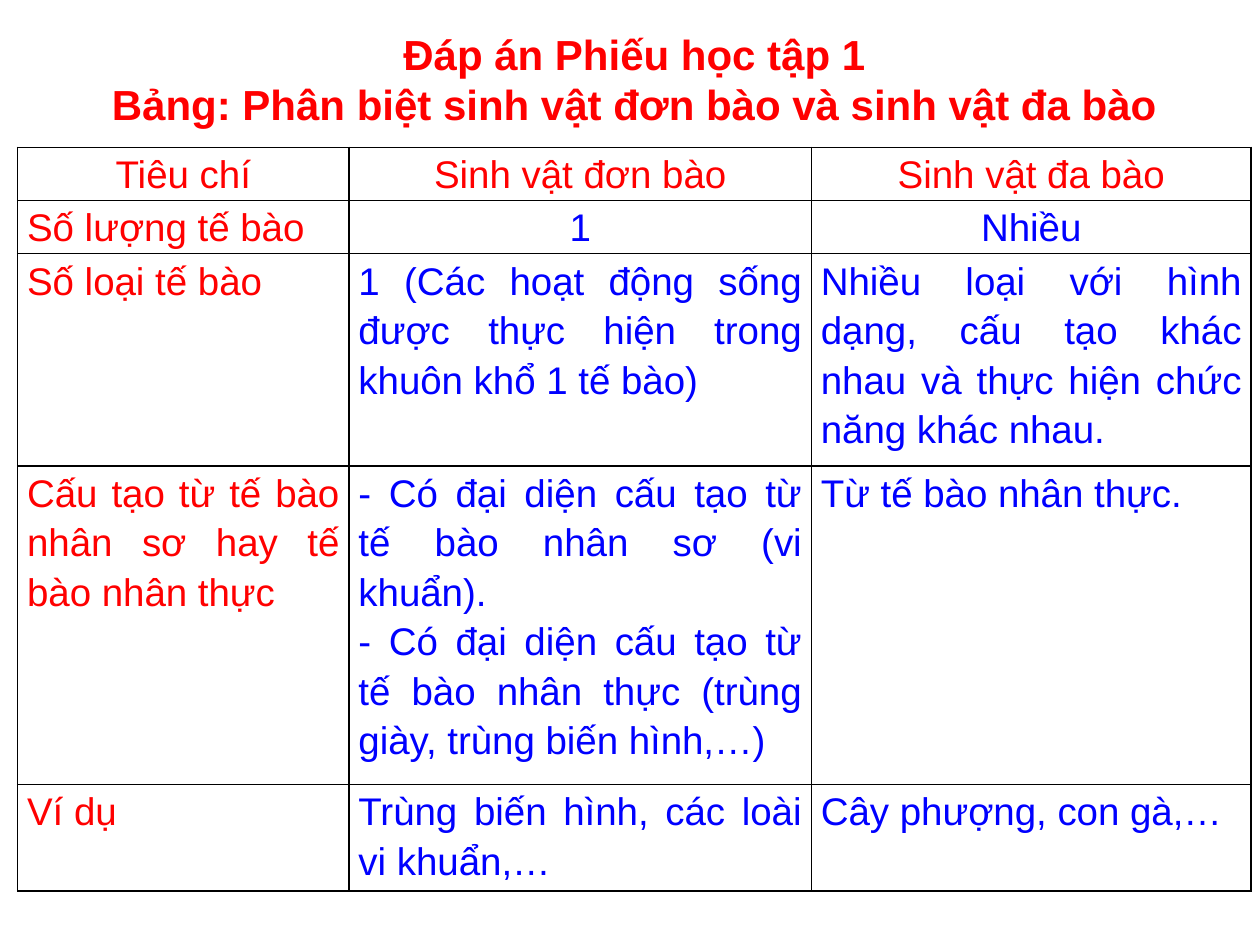
"""Build a slide with a table comparing unicellular and multicellular organisms."""
from lxml.etree import SubElement
from pptx import Presentation
from pptx.dml.color import RGBColor
from pptx.enum.text import MSO_ANCHOR, MSO_AUTO_SIZE, PP_ALIGN
from pptx.oxml.ns import qn
from pptx.util import Inches, Pt

RED = RGBColor(0xFF, 0x00, 0x00)
BLUE = RGBColor(0x00, 0x00, 0xFF)

TITLE = [
    "Đáp án Phiếu học tập 1",
    "Bảng: Phân biệt sinh vật đơn bào và sinh vật đa bào",
]
ROWS = [
    ("Tiêu chí", "Sinh vật đơn bào", "Sinh vật đa bào"),
    ("Số lượng tế bào", "1", "Nhiều"),
    (
        "Số loại tế bào",
        "1 (Các hoạt động sống được thực hiện trong khuôn khổ 1 tế bào)",
        "Nhiều loại với hình dạng, cấu tạo khác nhau và thực hiện chức năng khác nhau.",
    ),
    (
        "Cấu tạo từ tế bào nhân sơ hay tế bào nhân thực",
        "- Có đại diện cấu tạo từ tế bào nhân sơ (vi khuẩn).\n"
        "- Có đại diện cấu tạo từ tế bào nhân thực (trùng giày, trùng biến hình,…)",
        "Từ tế bào nhân thực.",
    ),
    ("Ví dụ", "Trùng biến hình, các loài vi khuẩn,…", "Cây phượng, con gà,…"),
]
COLUMN_WIDTHS = [2.63, 3.67, 3.49]
ROW_HEIGHTS = [0.31, 0.31, 0.96, 1.62, 0.64]
TABLE_LEFT, TABLE_TOP, TABLE_HEIGHT = 0.14, 1.17, 5.9
TAB_POSITION = Inches(0.59)

TITLE_BOX = {"left": Inches(0.75), "top": Inches(0.17), "width": Inches(8.57), "height": Inches(0.91)}
TITLE_FRAME = {
    "word_wrap": False,
    "auto_size": MSO_AUTO_SIZE.SHAPE_TO_FIT_TEXT,
    "vertical_anchor": MSO_ANCHOR.MIDDLE,
}
TITLE_FONT = {"name": "Arial", "size": Pt(24), "bold": True}
CELL_FONT = {"name": "Arial", "size": Pt(22), "bold": False}
CELL_FORMAT = {
    "margin_left": Pt(5.4),
    "margin_right": Pt(5.4),
    "margin_top": 0,
    "margin_bottom": 0,
    "vertical_anchor": MSO_ANCHOR.TOP,
}


def apply_format(target, values):
    for name, value in values.items():
        setattr(target, name, value)


def write_text(text_frame, text, font, color, paragraph_format):
    text_frame.text = text
    for paragraph in text_frame.paragraphs:
        apply_format(paragraph, paragraph_format)
        tabs = SubElement(paragraph._p.get_or_add_pPr(), qn("a:tabLst"))
        SubElement(tabs, qn("a:tab"), pos=str(TAB_POSITION), algn="l")
        for run in paragraph.runs:
            apply_format(run.font, font)
            run.font.color.rgb = color


def add_borders(cell):
    properties = cell._tc.get_or_add_tcPr()
    for side in ("a:lnL", "a:lnR", "a:lnT", "a:lnB"):
        line = SubElement(properties, qn(side), w=str(Pt(1)))
        fill = SubElement(line, qn("a:solidFill"))
        SubElement(fill, qn("a:srgbClr"), val="000000")


def add_title(slide):
    title = slide.shapes.title
    apply_format(title, TITLE_BOX)
    apply_format(title.text_frame, TITLE_FRAME)
    write_text(title.text_frame, "\n".join(TITLE), TITLE_FONT, RED, {"alignment": PP_ALIGN.CENTER})


def add_comparison_table(slide):
    shape = slide.shapes.add_table(
        len(ROWS), len(COLUMN_WIDTHS), Inches(TABLE_LEFT), Inches(TABLE_TOP),
        Inches(sum(COLUMN_WIDTHS)), Inches(TABLE_HEIGHT),
    )
    table = shape.table
    for column, width in zip(table.columns, COLUMN_WIDTHS):
        column.width = Inches(width)
    for row, height in zip(table.rows, ROW_HEIGHTS):
        row.height = Inches(height)
    shape.height = Inches(TABLE_HEIGHT)
    for row_index, texts in enumerate(ROWS):
        for column_index, text in enumerate(texts):
            cell = table.cell(row_index, column_index)
            is_heading = row_index == 0 or column_index == 0
            is_centered = row_index == 0 or (row_index == 1 and column_index > 0)
            paragraph_format = {
                "alignment": PP_ALIGN.CENTER if is_centered else PP_ALIGN.JUSTIFY,
                "line_spacing": 1.15,
            }
            apply_format(cell, CELL_FORMAT)
            write_text(cell.text_frame, text, CELL_FONT, RED if is_heading else BLUE, paragraph_format)
            add_borders(cell)
            cell.fill.background()


def main():
    presentation = Presentation()
    presentation.slide_width = Inches(10)
    presentation.slide_height = Inches(7.5)
    slide = presentation.slides.add_slide(presentation.slide_layouts[5])
    add_title(slide)
    add_comparison_table(slide)
    presentation.save("out.pptx")


if __name__ == "__main__":
    main()
